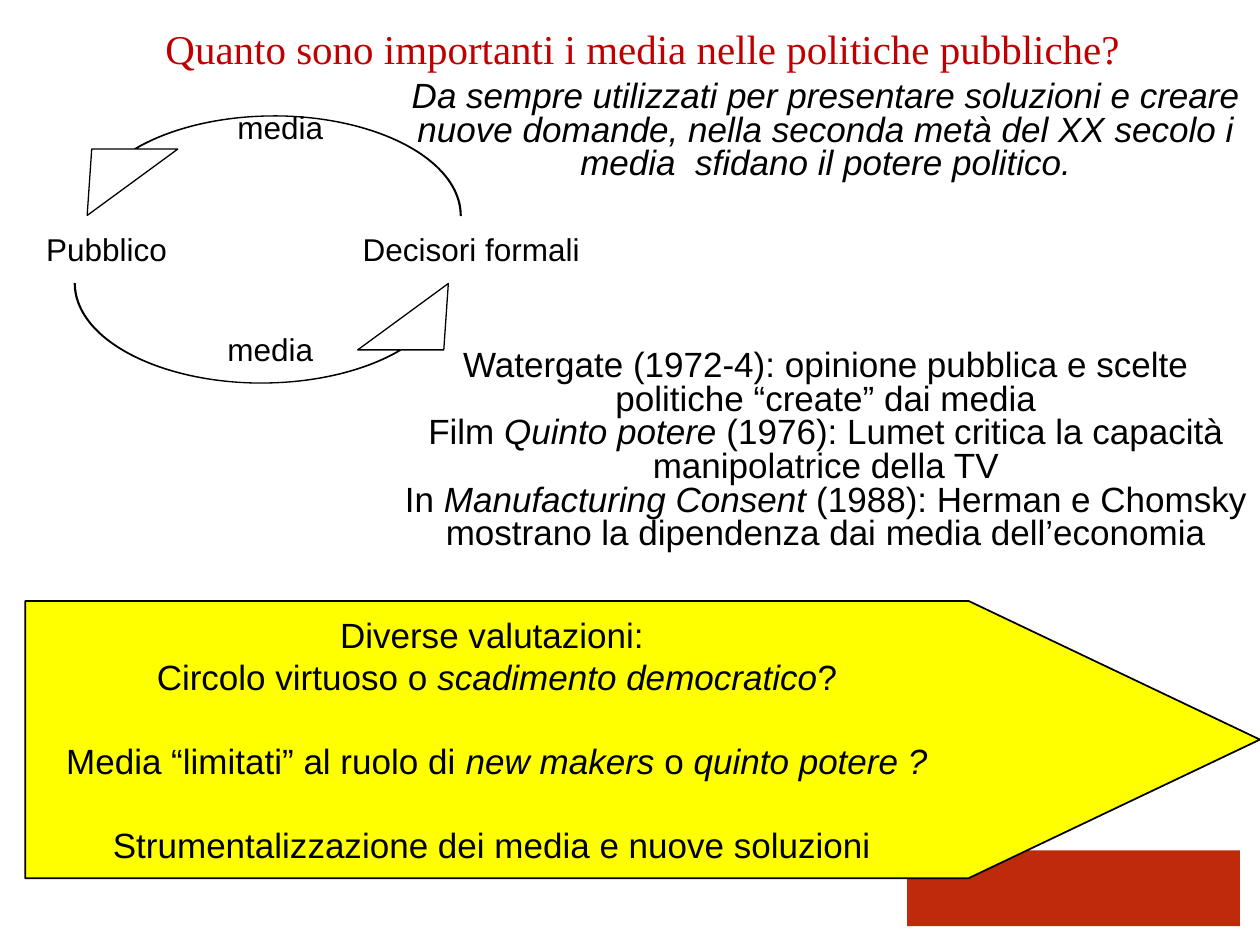
from typing import NamedTuple, Optional

from pptx import Presentation
from pptx import util as u
from pptx.dml.color import RGBColor
from pptx.enum import shapes, text

HUES = {"black": "000000", "title": "C00000", "red": "BD2B0B", "yellow": "FFFF00"}
KIND = shapes.MSO_SHAPE


class Box(NamedTuple):
    x: float
    y: float
    w: float
    h: float


class Para(NamedTuple):
    runs: tuple  # plain and italic runs take turns, plain first
    gap: float = 0


class Label(NamedTuple):
    word: str
    box: Box


def hue(name: str) -> RGBColor:
    return RGBColor.from_string(HUES[name])


def place(box: Box) -> list:
    return [u.Inches(side) for side in box]


def write(frame, paras: list, size: float, face: str = "Arial",
          tint: str = "black", pitch: Optional[float] = None) -> None:
    for i, item in enumerate(paras):
        para = frame.paragraphs[0] if i == 0 else frame.add_paragraph()
        para.alignment = text.PP_ALIGN.CENTER
        para.space_before = u.Pt(item.gap)
        if pitch:
            para.line_spacing = pitch
        para.font.size, para.font.name = u.Pt(size), face
        para.font.color.rgb = hue(tint)
        for n, words in enumerate(item.runs):
            if words:
                run = para.add_run()
                run.text = words
                run.font.italic = n % 2 == 1


def add_text(slide, box: Box, paras: list, size: float, **style):
    frame = slide.shapes.add_textbox(*place(box)).text_frame
    frame.word_wrap = True
    write(frame, paras, size, **style)
    return frame


def add_form(slide, kind, box: Box, fill: Optional[str] = None,
             line: float = 0, adj: tuple = ()):
    form = slide.shapes.add_shape(kind, *place(box))
    form.shadow.inherit = False
    for i, value in enumerate(adj):
        form.adjustments[i] = value
    if fill:
        form.fill.solid()
        form.fill.fore_color.rgb = hue(fill)
    else:
        form.fill.background()
    if line:
        form.line.width = u.Pt(line)
        form.line.color.rgb = hue("black")
    else:
        form.line.fill.background()
    return form


LABELS = [
    Label("Pubblico", Box(0, 1.78, 1.69, 0.5)),
    Label("Decisori formali", Box(2.32, 1.78, 2.84, 0.5)),
    Label("media", Box(1.38, 0.81, 1.69, 0.5)),
    Label("media", Box(1.3, 2.57, 1.69, 0.5)),
]

STORY = [
    Para(("", "Da sempre utilizzati per presentare soluzioni e creare nuove domande, "
          "nella seconda metà del XX secolo i media  sfidano il potere politico.")),
    Para(("Watergate (1972-4): opinione pubblica e scelte politiche “create” dai media",),
         gap=96),
    Para(("Film ", "Quinto potere ",
          "(1976): Lumet critica la capacità manipolatrice della TV")),
    Para(("In ", "Manufacturing Consent",
          " (1988): Herman e Chomsky mostrano la dipendenza dai media dell’economia")),
]

VIEWS = [
    Para(("Diverse valutazioni: ",)),
    Para(("Circolo virtuoso o ", "scadimento democratico", "?")),
    Para(("Media “limitati” al ruolo di ", "new makers ", "o ", "quinto potere ?"), gap=24),
    Para(("Strumentalizzazione dei media e nuove soluzioni ",), gap=24),
]


def main() -> None:
    deck = Presentation()
    deck.slide_width, deck.slide_height = u.Inches(10), u.Inches(7.5)
    slide = deck.slides.add_slide(deck.slide_layouts[6])

    # Corner block
    add_form(slide, KIND.RECTANGLE, Box(7.2, 6.75, 2.64, 0.6), fill="red")

    # Title
    title = add_text(slide, Box(0.2, 0.11, 9.8, 0.47),
                     [Para(("Quanto sono importanti i media nelle politiche pubbliche?",))],
                     23.4, face="Times New Roman", tint="title")
    title.vertical_anchor = text.MSO_ANCHOR.BOTTOM
    title.margin_bottom = 0

    # Media loop: one arrow, and the same arrow turned round
    for box, turn in ((Box(0.59, 2.25, 3.31, 0.79), 0), (Box(0.35, 0.92, 3.31, 0.79), 180)):
        arrow = add_form(slide, KIND.CURVED_UP_ARROW, box, line=0.75,
                         adj=(0.009, 0.864, 0.667))
        arrow.rotation = turn

    # Closing arrow
    close = add_form(slide, KIND.RIGHT_ARROW, Box(0.2, 4.77, 9.8, 2.2),
                     fill="yellow", line=1, adj=(1, 1.051))
    frame = close.text_frame
    frame.word_wrap = False
    frame.vertical_anchor = text.MSO_ANCHOR.MIDDLE
    write(frame, VIEWS, 20)

    # Story and loop labels
    add_text(slide, Box(3.11, 0.6, 6.89, 4.11), STORY, 20, pitch=0.8)
    for label in LABELS:
        add_text(slide, label.box, [Para((label.word,))], 18)

    deck.save("out.pptx")


if __name__ == "__main__":
    main()
